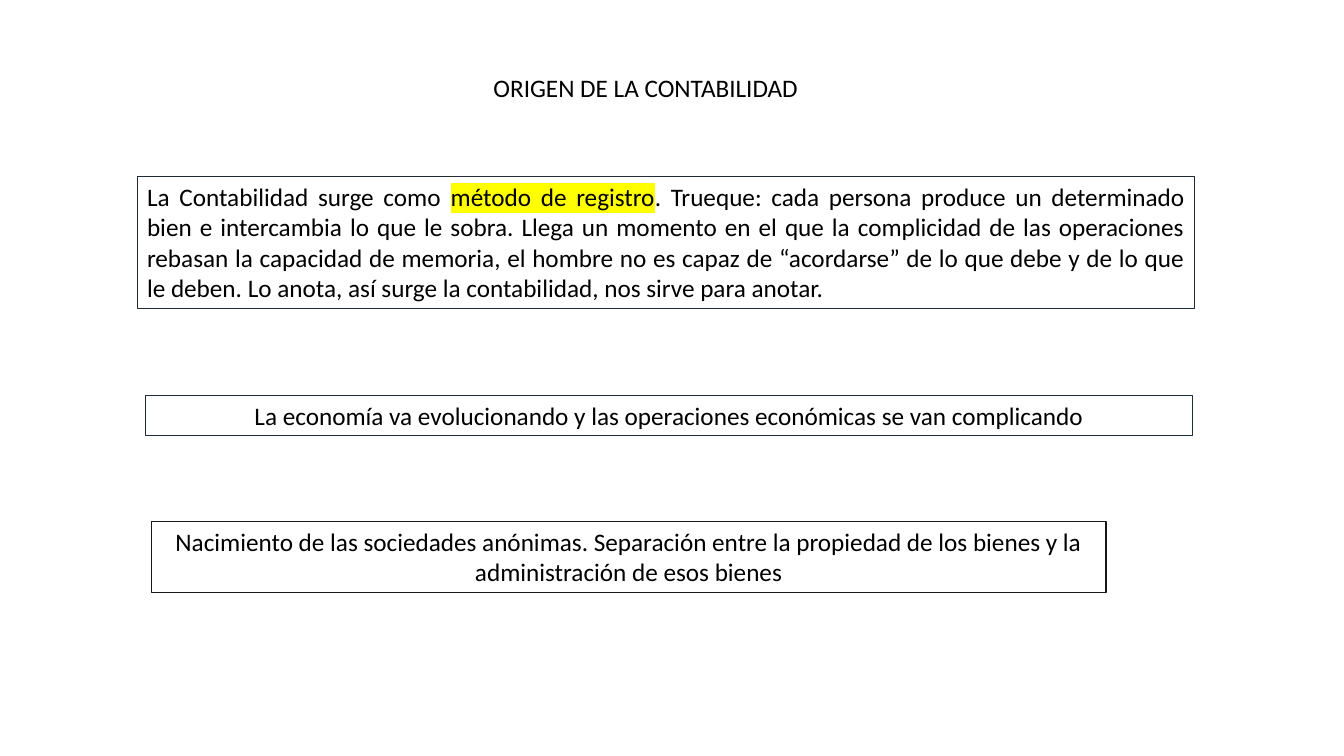
from lxml.etree import SubElement
from pptx import Presentation
from pptx.dml.color import RGBColor
from pptx.enum.shapes import MSO_SHAPE
from pptx.enum.text import MSO_ANCHOR, MSO_AUTO_SIZE, PP_ALIGN
from pptx.oxml.ns import qn
from pptx.util import Inches, Pt

BLACK = RGBColor(0x00, 0x00, 0x00)
SLATE = RGBColor(0x22, 0x2A, 0x35)
CHARCOAL = RGBColor(0x18, 0x17, 0x17)
YELLOW = RGBColor(0xFF, 0xFF, 0x00)

# Content: each span is (text, highlight colour or None)
TITLE = {
    "area": (0.85, 0.67, 11.11, 0.4),
    "align": PP_ALIGN.CENTER,
    "spans": [("ORIGEN DE LA CONTABILIDAD", None)],
}
BOXES = [
    {
        "area": (1.36, 1.75, 10.49, 1.31),
        "line": SLATE,
        "align": PP_ALIGN.JUSTIFY,
        "spans": [
            ("La Contabilidad surge como ", None),
            ("método de registro", YELLOW),
            (". Trueque: cada persona produce un determinado bien e intercambia "
             "lo que le sobra. Llega un momento en el que la complicidad de las "
             "operaciones rebasan la capacidad de memoria, el hombre no es capaz "
             "de “acordarse” de lo que debe y de lo que le deben. Lo anota, así "
             "surge la contabilidad, nos sirve para anotar.", None),
        ],
    },
    {
        "area": (1.44, 3.92, 10.39, 0.4),
        "line": SLATE,
        "align": PP_ALIGN.CENTER,
        "spans": [("La economía va evolucionando y las operaciones económicas "
                   "se van complicando", None)],
    },
    {
        "area": (1.5, 5.17, 9.47, 0.71),
        "line": CHARCOAL,
        "align": PP_ALIGN.CENTER,
        "spans": [("Nacimiento de las sociedades anónimas. Separación entre la "
                   "propiedad de los bienes y la administración de esos bienes",
                   None)],
    },
]
FRAME_FORMAT = {
    "word_wrap": True,
    "auto_size": MSO_AUTO_SIZE.SHAPE_TO_FIT_TEXT,
    "vertical_anchor": MSO_ANCHOR.TOP,
    "margin_left": Inches(0.1),
    "margin_right": Inches(0.1),
    "margin_top": Inches(0.05),
    "margin_bottom": Inches(0.05),
}
FONT_FORMAT = {"name": "Calibri", "size": Pt(18)}


def set_all(target, values):
    for name, value in values.items():
        setattr(target, name, value)


def highlight(span, color):
    """Put a marker colour behind a span, right after its text fill."""
    properties = span.font._element if hasattr(span.font, "_element") else span._r.get_or_add_rPr()
    marker = SubElement(properties, qn("a:highlight"))
    SubElement(marker, qn("a:srgbClr"), val=str(color))
    properties.find(qn("a:solidFill")).addnext(marker)


def write(shape, item):
    frame = shape.text_frame
    set_all(frame, FRAME_FORMAT)
    para = frame.paragraphs[0]
    para.alignment = item["align"]
    for text, marker_color in item["spans"]:
        span = para.add_run()
        span.text = text
        set_all(span.font, FONT_FORMAT)
        span.font.color.rgb = BLACK
        if marker_color is not None:
            highlight(span, marker_color)


deck = Presentation()
deck.slide_width, deck.slide_height = Inches(13.33), Inches(7.5)
page = deck.slides.add_slide(deck.slide_layouts[5])

# Title
title = page.shapes.title
edges = map(Inches, TITLE["area"])
set_all(title, dict(zip(("left", "top", "width", "height"), edges)))
write(title, TITLE)

# Outlined boxes
for item in BOXES:
    box = page.shapes.add_shape(MSO_SHAPE.RECTANGLE, *map(Inches, item["area"]))
    box.shadow.inherit = False
    box.fill.background()
    box.line.color.rgb = item["line"]
    box.line.width = Pt(0.75)
    write(box, item)

deck.save("out.pptx")
